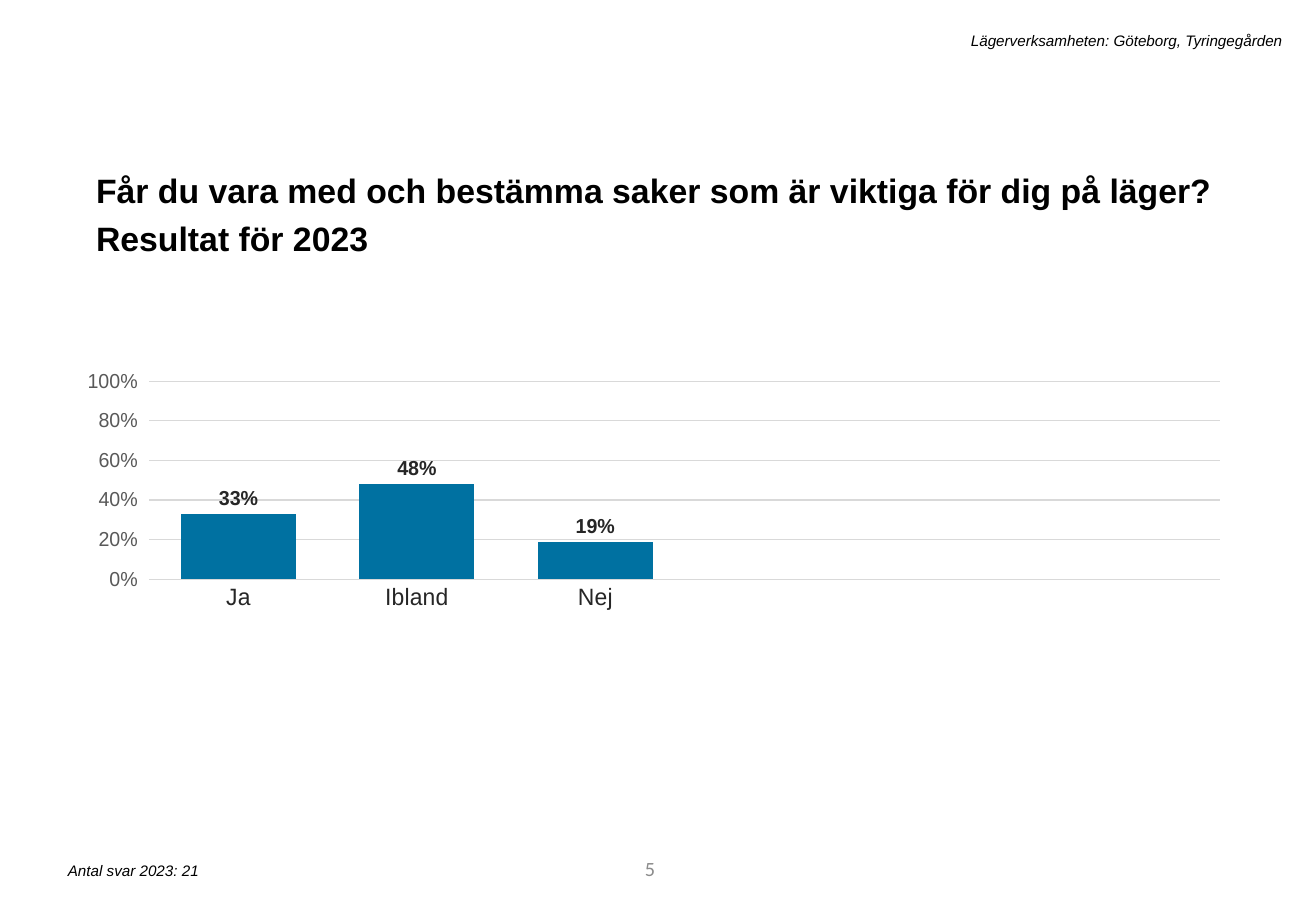
from pptx import Presentation
from pptx.chart.data import CategoryChartData
from pptx.dml.color import RGBColor
from pptx.enum.chart import XL_CHART_TYPE, XL_LABEL_POSITION, XL_TICK_MARK
from pptx.enum.text import MSO_ANCHOR, MSO_AUTO_SIZE, PP_ALIGN
from pptx.oxml import parse_xml
from pptx.oxml.ns import nsdecls
from pptx.util import Inches, Pt

BLACK, DARK, GREY, PALE, BLUE = "000000", "262626", "595959", "D9D9D9", "0071A1"


def style(font, size, color, bold=False, italic=False, name="Arial"):
    font.name, font.size, font.bold, font.italic = name, Pt(size), bold, italic
    font.color.rgb = RGBColor.from_string(color)


def hairline(line):
    line.color.rgb = RGBColor.from_string(PALE)
    line.width = Pt(0.75)


prs = Presentation()
prs.slide_width, prs.slide_height = Inches(10.83), Inches(7.5)
slide = prs.slides.add_slide(prs.slide_layouts[5])

# Question as title
question = slide.shapes.title
question.left, question.top = Inches(0.69), Inches(1.28)
question.width, question.height = Inches(9.4), Inches(0.47)
question.text_frame.text = (
    "Får du vara med och bestämma saker som är viktiga för dig på läger? Resultat för 2023"
)
question.text_frame.word_wrap = True
question.text_frame.auto_size = MSO_AUTO_SIZE.NONE
question.text_frame.vertical_anchor = MSO_ANCHOR.TOP
heading = question.text_frame.paragraphs[0]
heading.alignment = PP_ALIGN.LEFT
heading.line_spacing = 1.2
heading.space_before = Pt(10)
style(heading.runs[0].font, 20, BLACK, bold=True)

# Header, footer and page number
small_print = dict(size=9, color=BLACK, italic=True)
page_number = dict(size=12, color="8C8C8C", name="Calibri")
for text, box, align, anchor, look in [
    ("Lägerverksamheten: Göteborg, Tyringegården", (1.79, 0.21, 8.86, 0.25),
     PP_ALIGN.RIGHT, MSO_ANCHOR.TOP, small_print),
    ("Antal svar 2023: 21", (0.46, 7.04, 4.41, 0.25),
     PP_ALIGN.LEFT, MSO_ANCHOR.TOP, small_print),
    ("5", (3.05, 6.95, 2.44, 0.4),
     PP_ALIGN.RIGHT, MSO_ANCHOR.MIDDLE, page_number),
]:
    frame = slide.shapes.add_textbox(*map(Inches, box)).text_frame
    frame.word_wrap = True
    frame.vertical_anchor = anchor
    frame.text = text
    frame.paragraphs[0].alignment = align
    style(frame.paragraphs[0].runs[0].font, **look)

# Answers: three options, with room for six columns
answers = CategoryChartData(number_format="0%")
answers.categories = ["Ja", "Ibland", "Nej", "", "", ""]
answers.add_series("Series 1", [0.33, 0.48, 0.19, None, None, None])
chart = slide.shapes.add_chart(
    XL_CHART_TYPE.COLUMN_CLUSTERED,
    Inches(0.72), Inches(2.53), Inches(9.4), Inches(3.95), answers,
).chart
chart.has_legend = False
chart.has_title = False
style(chart.font, 10, BLACK)

options = chart.category_axis
options.major_tick_mark = XL_TICK_MARK.NONE
style(options.tick_labels.font, 14, DARK)
hairline(options.format.line)

share = chart.value_axis
share.minimum_scale, share.maximum_scale, share.major_unit = 0, 1, 0.2
share.major_tick_mark = XL_TICK_MARK.OUTSIDE
share.tick_labels.number_format = "0%"
share.tick_labels.number_format_is_linked = False
style(share.tick_labels.font, 12, GREY)
share.format.line.fill.background()
hairline(share.major_gridlines.format.line)

columns = chart.plots[0]
columns.gap_width = 55
columns.vary_by_categories = False
bars = columns.series[0]
bars.format.fill.solid()
bars.format.fill.fore_color.rgb = RGBColor.from_string(BLUE)
labels = bars.data_labels
labels.show_value = True
labels.position = XL_LABEL_POSITION.OUTSIDE_END
labels.number_format = "0%"
labels.number_format_is_linked = False
style(labels.font, 12, DARK, bold=True)

# Plot area as shares of the chart frame
plot_area = chart._chartSpace.chart.plotArea
for old_layout in plot_area.findall("{*}layout"):
    plot_area.remove(old_layout)
shares = "".join(
    f'<c:{key} val="{value}"/>'
    for key, value in [
        ("layoutTarget", "inner"), ("xMode", "edge"), ("yMode", "edge"),
        ("x", 0.025), ("y", 0.154), ("w", 0.966), ("h", 0.413),
    ]
)
plot_area.insert(0, parse_xml(
    f'<c:layout {nsdecls("c")}><c:manualLayout>{shares}</c:manualLayout></c:layout>'
))

prs.save("out.pptx")
